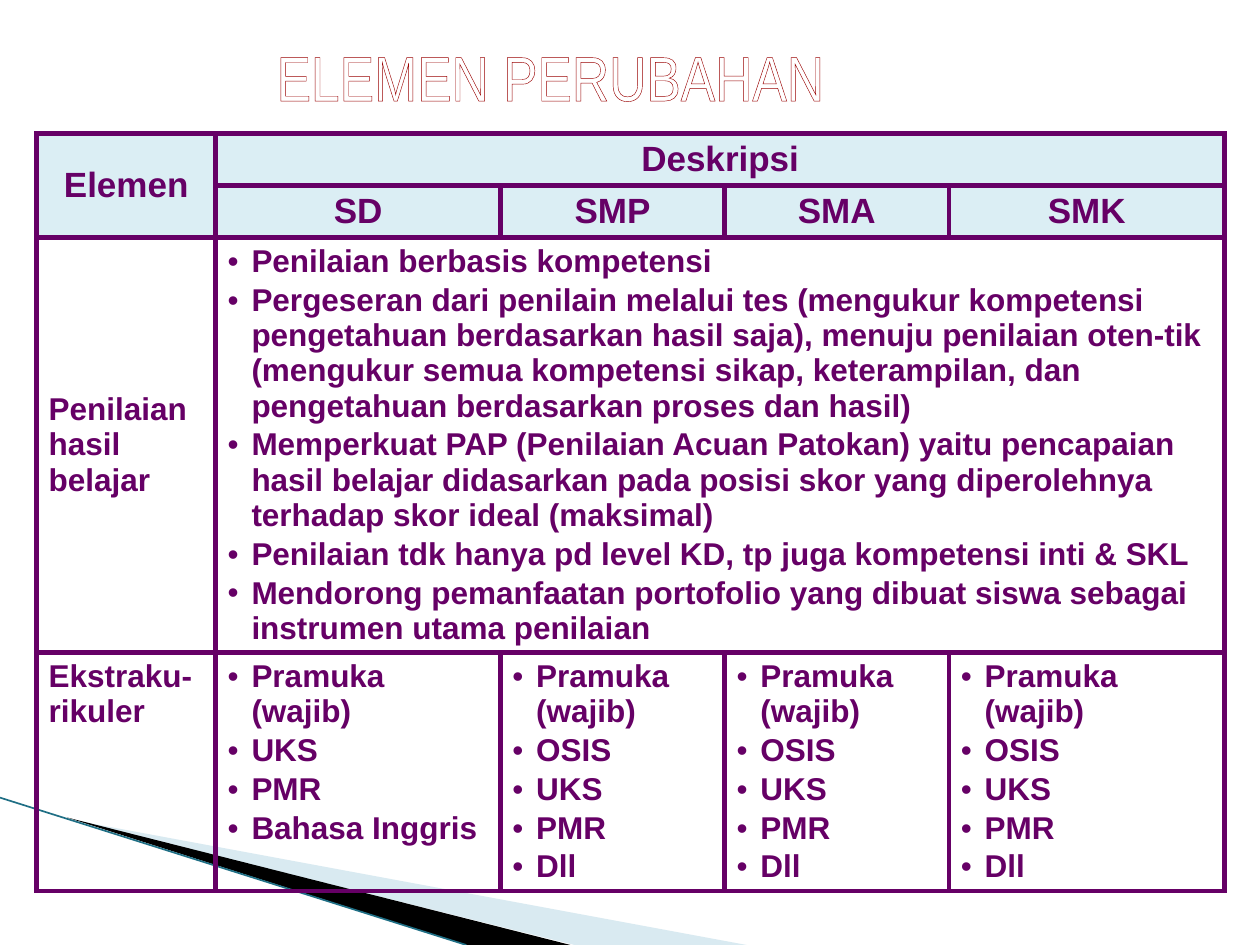
from lxml import etree
from pptx import Presentation
from pptx.dml.color import RGBColor
from pptx.enum.shapes import MSO_CONNECTOR
from pptx.enum.text import MSO_ANCHOR, MSO_AUTO_SIZE, PP_ALIGN
from pptx.oxml import parse_xml
from pptx.oxml.ns import qn
from pptx.util import Cm, Pt

LINE = MSO_CONNECTOR.STRAIGHT
TOP, MIDDLE = MSO_ANCHOR.TOP, MSO_ANCHOR.MIDDLE
LEFT, CENTER = PP_ALIGN.LEFT, PP_ALIGN.CENTER

WHITE = RGBColor(0xFF, 0xFF, 0xFF)
BLACK = RGBColor(0, 0, 0)
RED = RGBColor(0x99, 0, 0)
PURPLE = RGBColor(0x66, 0, 0x66)
PALE = RGBColor(0xDB, 0xEE, 0xF4)
BLUE = RGBColor(0xA0, 0xCB, 0xDC)
TEAL = RGBColor(0x1F, 0x6F, 0x85)

TITLE = "ELEMEN PERUBAHAN"
LEVELS = ["SD", "SMP", "SMA", "SMK"]
RATING = [
    "Penilaian berbasis kompetensi",
    "Pergeseran dari penilain melalui tes (mengukur kompetensi pengetahuan "
    "berdasarkan hasil saja), menuju penilaian oten-tik (mengukur semua "
    "kompetensi sikap, keterampilan, dan pengetahuan berdasarkan proses dan hasil)",
    "Memperkuat PAP (Penilaian Acuan Patokan) yaitu pencapaian hasil belajar "
    "didasarkan pada posisi skor yang diperolehnya terhadap skor ideal (maksimal)",
    "Penilaian tdk hanya pd level KD, tp juga kompetensi inti & SKL",
    "Mendorong pemanfaatan portofolio yang dibuat siswa sebagai instrumen "
    "utama penilaian",
]
BASIC = ["Pramuka (wajib)", "UKS", "PMR", "Bahasa Inggris"]
UPPER = ["Pramuka (wajib)", "OSIS", "UKS", "PMR", "Dll"]
CLUBS = [BASIC, UPPER, UPPER, UPPER]

COLS = [3.61, 5.74, 4.52, 4.52, 5.56]
ROWS = [1.04, 1.04, 8.36, 4.8]
INDENT = Cm(0.48)

# Corner wedges: points in cm, colour, opacity in percent
WEDGES = [
    ([(1.4, 16.52), (15.05, 19.05), (11.58, 19.05)], BLUE, 40),
    ([(1.35, 16.48), (11.5, 19.05), (9.4, 19.05)], BLACK, 100),
]


def draw_wedge(shapes, points, color, alpha):
    pen = shapes.build_freeform(*[Cm(v) for v in points[0]])
    pen.add_line_segments([(Cm(x), Cm(y)) for x, y in points[1:]], close=True)
    wedge = pen.convert_to_shape()
    wedge.shadow.inherit = False
    wedge.fill.solid()
    wedge.fill.fore_color.rgb = color
    wedge.line.fill.background()
    if alpha < 100:
        tone = wedge.fill._xPr.find(".//" + qn("a:srgbClr"))
        etree.SubElement(tone, qn("a:alpha"), val=str(alpha * 1000))


def outline(tag, color, width):
    return parse_xml(
        f'<a:{tag} xmlns:a="http://schemas.openxmlformats.org/drawingml/2006/main" '
        f'w="{Pt(width)}"><a:solidFill><a:srgbClr val="{color}"/></a:solidFill>'
        f'</a:{tag}>')


def add_bullet(para):
    props = para._p.get_or_add_pPr()
    props.set("marL", str(INDENT))
    props.set("indent", str(-INDENT))
    etree.SubElement(props, qn("a:buFont"), typeface="Arial")
    etree.SubElement(props, qn("a:buChar"), char="•")


def fill_cell(cell, lines, size=18, align=LEFT, anchor=TOP, bullets=False):
    cell.vertical_anchor = anchor
    frame = cell.text_frame
    frame.text = "\n".join(lines)
    for i, para in enumerate(frame.paragraphs):
        para.alignment = align
        if i:
            para.space_before = Pt(2)
        if bullets:
            add_bullet(para)
        for run in para.runs:
            font = run.font
            font.name, font.size, font.bold = "Arial", Pt(size), True
            font.color.rgb = PURPLE


def style_grid(table):
    for r in range(len(ROWS)):
        for c in range(len(COLS)):
            cell = table.cell(r, c)
            if r < 2:
                cell.fill.solid()
                cell.fill.fore_color.rgb = PALE
            else:
                cell.fill.background()
            cell.margin_left = cell.margin_right = Cm(0.24)
            cell.margin_top = cell.margin_bottom = Cm(0.13)
            props = cell._tc.get_or_add_tcPr()
            for i, side in enumerate("LRTB"):
                props.insert(i, outline("ln" + side, PURPLE, 3))


def add_grid(shapes):
    table = shapes.add_table(len(ROWS), len(COLS), Cm(0.74), Cm(2.69),
                             Cm(sum(COLS)), Cm(sum(ROWS))).table
    table.first_row = table.horz_banding = False
    for col, width in zip(table.columns, COLS):
        col.width = Cm(width)
    for row, height in zip(table.rows, ROWS):
        row.height = Cm(height)
    at = table.cell
    at(0, 0).merge(at(1, 0))
    at(0, 1).merge(at(0, 4))
    at(2, 1).merge(at(2, 4))

    heads = [(0, 0, "Elemen"), (0, 1, "Deskripsi")]
    heads += [(1, c, name) for c, name in enumerate(LEVELS, 1)]
    for r, c, name in heads:
        fill_cell(at(r, c), [name], 20, CENTER, MIDDLE)
    fill_cell(at(2, 0), ["Penilaian hasil belajar"], anchor=MIDDLE)
    fill_cell(at(2, 1), RATING, anchor=MIDDLE, bullets=True)
    fill_cell(at(3, 0), ["Ekstraku-rikuler"])
    for c, clubs in enumerate(CLUBS, 1):
        fill_cell(at(3, c), clubs, bullets=True)
    style_grid(table)


def set_title(title):
    title.left, title.top, title.width, title.height = (
        Cm(0.84), Cm(0.64), Cm(20.52), Cm(1.27))
    frame = title.text_frame
    frame.text = TITLE
    frame.word_wrap = False
    frame.auto_size = MSO_AUTO_SIZE.NONE
    frame.vertical_anchor = TOP
    para = frame.paragraphs[0]
    para.alignment = CENTER
    run = para.runs[0]
    run.font.name, run.font.size = "Arial Narrow", Pt(36)
    run.font.color.rgb = WHITE
    run.font._rPr.insert(0, outline("ln", RED, 4.5))


def main():
    deck = Presentation()
    deck.slide_width, deck.slide_height = Cm(25.4), Cm(19.05)
    slide = deck.slides.add_slide(deck.slide_layouts[5])
    shapes = slide.shapes
    set_title(shapes.title)
    for wedge in WEDGES:
        draw_wedge(shapes, *wedge)
    edge = shapes.add_connector(LINE, 0, Cm(16.08), Cm(9.4), Cm(19.05))
    edge.line.color.rgb = TEAL
    edge.line.width = Pt(0.95)
    etree.SubElement(edge._element.spPr, qn("a:effectLst"))
    add_grid(shapes)
    deck.save("out.pptx")


if __name__ == "__main__":
    main()
